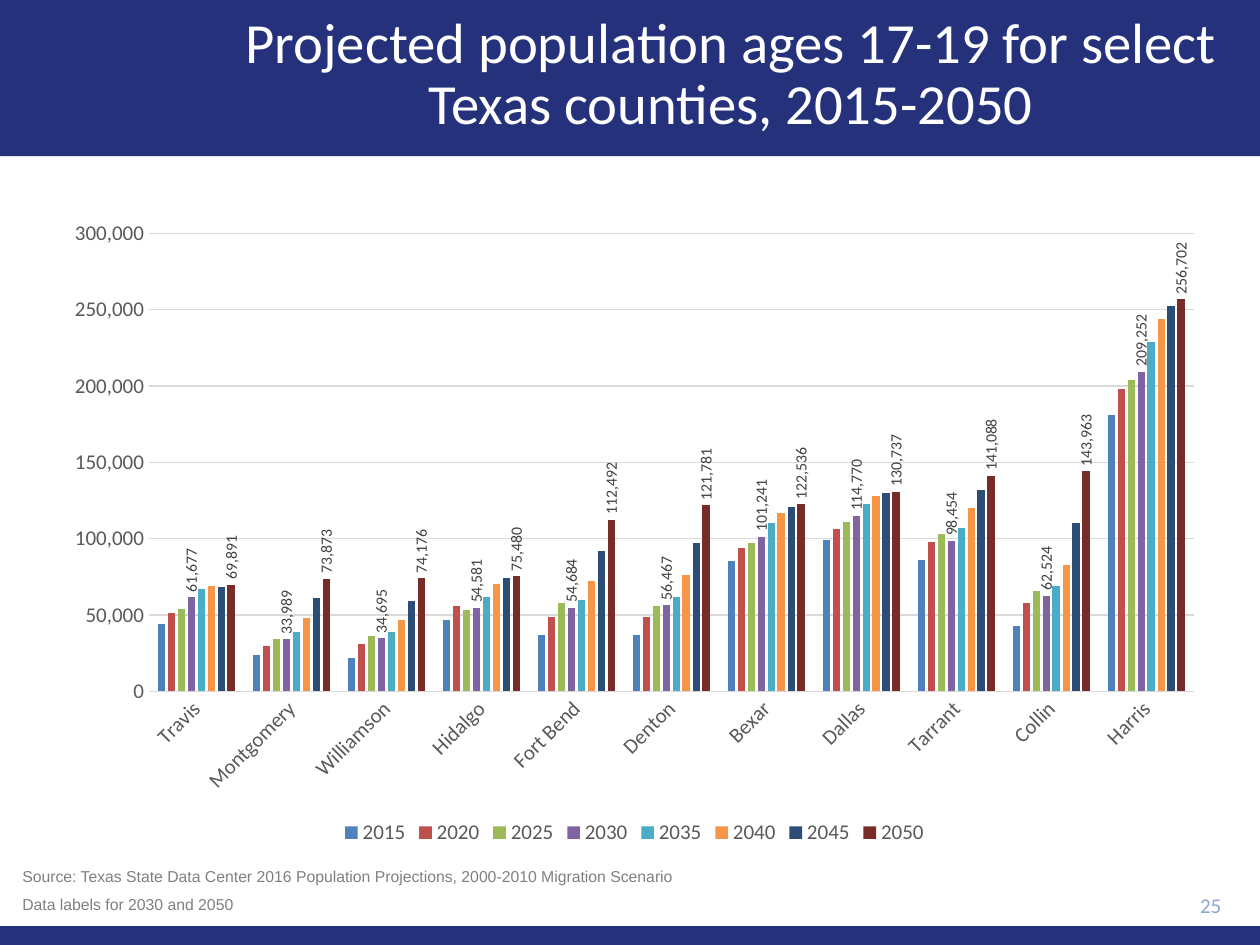
"""Build the slide on projected population in select Texas counties."""
from pptx import Presentation
from pptx.chart.data import CategoryChartData
from pptx.dml.color import RGBColor
from pptx.enum.chart import XL_CHART_TYPE, XL_LABEL_POSITION, XL_LEGEND_POSITION, XL_TICK_MARK
from pptx.enum.shapes import MSO_SHAPE
from pptx.enum.text import MSO_ANCHOR, PP_ALIGN
from pptx.util import Cm, Pt

TITLE = "Projected population ages 17-19 for select Texas counties, 2015-2050"
NOTES = [
    "Source: Texas State Data Center 2016 Population Projections, 2000-2010 Migration Scenario",
    "Data labels for 2030 and 2050",
]
BANDS = [(0, 3.15), (18.67, 0.38)]
COUNTIES = ["Travis", "Montgomery", "Williamson", "Hidalgo", "Fort Bend", "Denton",
            "Bexar", "Dallas", "Tarrant", "Collin", "Harris"]
SERIES = [
    ("2015", "4F81BD", [44000, 24000, 22000, 47000, 37000, 37000,
                        85000, 99000, 86000, 43000, 181000]),
    ("2020", "C0504D", [51000, 30000, 31000, 56000, 49000, 49000,
                        94000, 106000, 98000, 58000, 198000]),
    ("2025", "9BBB59", [54000, 34000, 36000, 53000, 58000, 56000,
                        97000, 111000, 103000, 66000, 204000]),
    ("2030", "8064A2", [61677, 33989, 34695, 54581, 54684, 56467,
                        101241, 114770, 98454, 62524, 209252]),
    ("2035", "4BACC6", [67000, 39000, 39000, 62000, 60000, 62000,
                        110000, 123000, 107000, 69000, 229000]),
    ("2040", "F79646", [69000, 48000, 47000, 70000, 72000, 76000,
                        117000, 128000, 120000, 83000, 244000]),
    ("2045", "2C4D75", [68000, 61000, 59000, 74000, 92000, 97000,
                        121000, 130000, 132000, 110000, 252000]),
    ("2050", "772C2A", [69891, 73873, 74176, 75480, 112492, 121781,
                        122536, 130737, 141088, 143963, 256702]),
]
LABELED = {"2030", "2050"}
NUMBER = "#,##0"


def tint(color, code):
    color.rgb = RGBColor.from_string(code)


def style(font, size, code, name="Calibri"):
    font.size, font.name = Pt(size), name
    tint(font.color, code)


def ink(line, code="D9D9D9"):
    line.width = Pt(0.75)
    tint(line.color, code)


def turn(owner, angle):
    body = owner._element.find("{*}txPr/{*}bodyPr")
    body.set("rot", str(angle * 60000))
    body.set("vert", "horz")


def add_band(slide, top, height):
    band = slide.shapes.add_shape(MSO_SHAPE.RECTANGLE, 0, Cm(top), Cm(25.4), Cm(height))
    band.shadow.inherit = False
    band.fill.solid()
    tint(band.fill.fore_color, "25327B")
    band.line.fill.background()


def add_text(slide, place, lines, look, align=PP_ALIGN.LEFT, anchor=MSO_ANCHOR.MIDDLE):
    frame = slide.shapes.add_textbox(*map(Cm, place)).text_frame
    frame.word_wrap, frame.vertical_anchor = True, anchor
    frame.text = "\n".join(lines)
    for par in frame.paragraphs:
        par.alignment = align
        style(par.font, *look)
    return frame


def add_graph(slide):
    data = CategoryChartData(number_format=NUMBER)
    data.categories = COUNTIES
    for name, _, values in SERIES:
        data.add_series(name, values)
    place = map(Cm, (1.04, 4.19, 23.5, 12.95))
    chart = slide.shapes.add_chart(XL_CHART_TYPE.COLUMN_CLUSTERED, *place, data).chart
    style(chart.font, 10, "000000")
    chart.has_title = False
    chart.has_legend = True
    chart.legend.position = XL_LEGEND_POSITION.BOTTOM
    chart.legend.include_in_layout = False
    style(chart.legend.font, 12, "595959")

    base, scale = chart.category_axis, chart.value_axis
    for axis in (base, scale):
        axis.major_tick_mark = axis.minor_tick_mark = XL_TICK_MARK.NONE
        style(axis.tick_labels.font, 12, "595959")
    ink(base.format.line)
    turn(base, -45)
    scale.format.line.fill.background()
    scale.minimum_scale, scale.maximum_scale, scale.major_unit = 0, 300000, 50000
    ink(scale.major_gridlines.format.line)
    scale.tick_labels.number_format = NUMBER
    scale.tick_labels.number_format_is_linked = False

    plot = chart.plots[0]
    plot.gap_width, plot.overlap, plot.vary_by_categories = 219, -27, False
    for bars, (name, code, _) in zip(plot.series, SERIES):
        bars.format.fill.solid()
        tint(bars.format.fill.fore_color, code)
        if name in LABELED:
            tags = bars.data_labels
            style(tags.font, 9, "404040")
            tags.number_format, tags.number_format_is_linked = NUMBER, False
            tags.position, tags.show_value = XL_LABEL_POSITION.OUTSIDE_END, True
            turn(tags, -90)


def main():
    deck = Presentation()
    deck.slide_width, deck.slide_height = Cm(25.4), Cm(19.05)
    slide = deck.slides.add_slide(deck.slide_layouts[6])
    for band in BANDS:
        add_band(slide, *band)
    title = add_text(slide, (4.32, 0.25, 20.83, 2.54), [TITLE], (32.4, "FFFFFF"),
                     PP_ALIGN.CENTER)
    title.paragraphs[0].line_spacing = 0.9
    add_graph(slide)
    add_text(slide, (22.61, 17.81, 2.26, 0.86), ["25"], (12, "8FA5D1"), PP_ALIGN.RIGHT)
    notes = add_text(slide, (0.2, 17.35, 24.33, 1.22), NOTES, (9, "808080", "Arial"),
                     anchor=MSO_ANCHOR.TOP)
    notes.paragraphs[1].space_before = Pt(5)
    deck.save("out.pptx")


if __name__ == "__main__":
    main()
